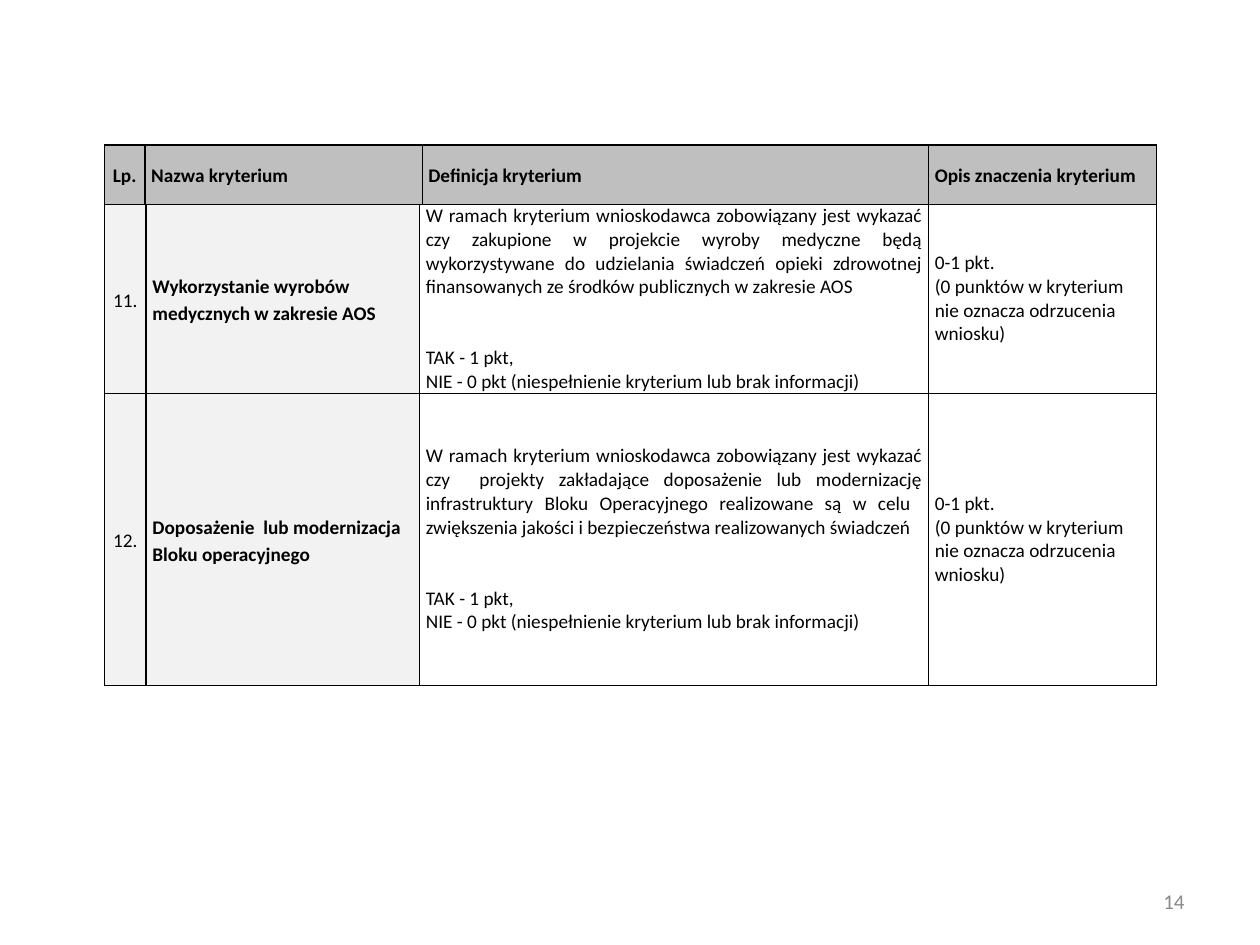
from dataclasses import dataclass

from lxml.etree import SubElement
from pptx import Presentation
from pptx.dml.color import RGBColor
from pptx.enum.text import MSO_ANCHOR, PP_ALIGN
from pptx.oxml.ns import qn
from pptx.util import Inches, Pt

COLORS = {"text": "000000", "border": "000000", "header": "BFBFBF",
          "label": "F2F2F2", "body": "FFFFFF", "number": "898989"}
FONT = "Calibri"
TABLE_LEFT = 0.83
HEADER_TOP, HEADER_HEIGHT = 1.15, 0.47
THICK, THIN = 1, 0.5
ANSWER_GAP = 27

ANSWERS = ["TAK - 1 pkt,", "NIE - 0 pkt (niespełnienie kryterium lub brak informacji)"]
MEANING = ["0-1 pkt.", "(0 punktów w kryterium", "nie oznacza odrzucenia wniosku)"]


@dataclass
class CellText:
    lines: list[str]
    fill: str = "body"
    bold: bool = False
    alignment: PP_ALIGN = PP_ALIGN.LEFT
    spaced: bool = False
    gap_before_line: int | None = None


@dataclass
class TableLayout:
    top: float
    columns: list[float]
    rows: list[float]
    thick_edges: set[int]
    top_width: float


def header_cell(title: str, alignment: PP_ALIGN = PP_ALIGN.LEFT) -> CellText:
    return CellText([title], "header", True, alignment, True)


def criterion_row(number: str, name: str, definition: str) -> list[CellText]:
    return [
        CellText([number], "label", False, PP_ALIGN.CENTER, True),
        CellText([name], "label", True, PP_ALIGN.LEFT, True),
        CellText([definition, *ANSWERS], alignment=PP_ALIGN.JUSTIFY, gap_before_line=1),
        CellText(MEANING),
    ]


def color(name: str) -> RGBColor:
    return RGBColor.from_string(COLORS[name])


def style_font(font, size: float, color_name: str, bold: bool = False) -> None:
    font.name, font.size, font.bold = FONT, Pt(size), bold
    font.color.rgb = color(color_name)


def set_borders(cell, widths: dict[str, float]) -> None:
    """Draw the sides given as L, R, T, B, in that order, ahead of the fill."""
    properties = cell._tc.get_or_add_tcPr()
    for position, (side, width) in enumerate(widths.items()):
        line = SubElement(properties, qn(f"a:ln{side}"), w=str(Pt(width)))
        fill = SubElement(line, qn("a:solidFill"))
        SubElement(fill, qn("a:srgbClr"), val=COLORS["border"])
        properties.insert(position, line)


def fill_cell(cell, content: CellText) -> None:
    cell.fill.solid()
    cell.fill.fore_color.rgb = color(content.fill)
    cell.margin_left = cell.margin_right = Inches(0.05)
    cell.margin_top = cell.margin_bottom = 0
    cell.vertical_anchor = MSO_ANCHOR.MIDDLE
    cell.text_frame.text = "\n".join(content.lines)
    for index, paragraph in enumerate(cell.text_frame.paragraphs):
        paragraph.alignment = content.alignment
        if content.spaced:
            paragraph.line_spacing = 1.15
            paragraph.space_after = Pt(10)
        if index == content.gap_before_line:
            paragraph.space_before = Pt(ANSWER_GAP)
        for run in paragraph.runs:
            style_font(run.font, 11, "text", content.bold)


def add_criteria_table(slide, layout: TableLayout, contents: list[list[CellText]]) -> None:
    table = slide.shapes.add_table(
        len(layout.rows), len(layout.columns), Inches(TABLE_LEFT), Inches(layout.top),
        Inches(sum(layout.columns)), Inches(sum(layout.rows))).table
    table.first_row = table.horz_banding = False
    for column, width in zip(table.columns, layout.columns):
        column.width = Inches(width)
    for row, height in zip(table.rows, layout.rows):
        row.height = Inches(height)
    edges = [THICK if edge in layout.thick_edges else THIN
             for edge in range(len(layout.columns) + 1)]
    for row_index, row in enumerate(contents):
        for column_index, content in enumerate(row):
            cell = table.cell(row_index, column_index)
            fill_cell(cell, content)
            set_borders(cell, {
                "L": edges[column_index], "R": edges[column_index + 1],
                "T": THIN if row_index else layout.top_width, "B": THIN})


def add_page_number(slide, number: str) -> None:
    box = slide.shapes.add_textbox(Inches(7.17), Inches(6.95), Inches(2.33), Inches(0.4))
    frame = box.text_frame
    frame.word_wrap = True
    frame.vertical_anchor = MSO_ANCHOR.MIDDLE
    frame.text = number
    paragraph = frame.paragraphs[0]
    paragraph.alignment = PP_ALIGN.RIGHT
    style_font(paragraph.runs[0].font, 12, "number")


def main() -> None:
    presentation = Presentation()
    presentation.slide_width, presentation.slide_height = Inches(10), Inches(7.5)
    slide = presentation.slides.add_slide(presentation.slide_layouts[6])
    add_page_number(slide, "14")

    header = TableLayout(HEADER_TOP, [0.32, 2.2, 4.02, 1.81], [HEADER_HEIGHT],
                         {0, 1, 4}, THICK)
    add_criteria_table(slide, header, [[
        header_cell("Lp.", PP_ALIGN.CENTER), header_cell("Nazwa kryterium"),
        header_cell("Definicja kryterium"), header_cell("Opis znaczenia kryterium")]])

    criteria = TableLayout(HEADER_TOP + HEADER_HEIGHT, [0.33, 2.17, 4.04, 1.81],
                           [1.5, 2.32], {0, 1, 2, 4}, THIN)
    add_criteria_table(slide, criteria, [
        criterion_row(
            "11.", "Wykorzystanie wyrobów medycznych w zakresie AOS",
            "W ramach kryterium wnioskodawca zobowiązany jest wykazać czy zakupione "
            "w projekcie wyroby medyczne będą wykorzystywane do udzielania świadczeń "
            "opieki zdrowotnej finansowanych ze środków publicznych w zakresie AOS"),
        criterion_row(
            "12.", "Doposażenie  lub modernizacja Bloku operacyjnego",
            "W ramach kryterium wnioskodawca zobowiązany jest wykazać czy  projekty "
            "zakładające doposażenie lub modernizację infrastruktury Bloku Operacyjnego "
            "realizowane są w celu  zwiększenia jakości i bezpieczeństwa realizowanych "
            "świadczeń"),
    ])
    presentation.save("out.pptx")


if __name__ == "__main__":
    main()
